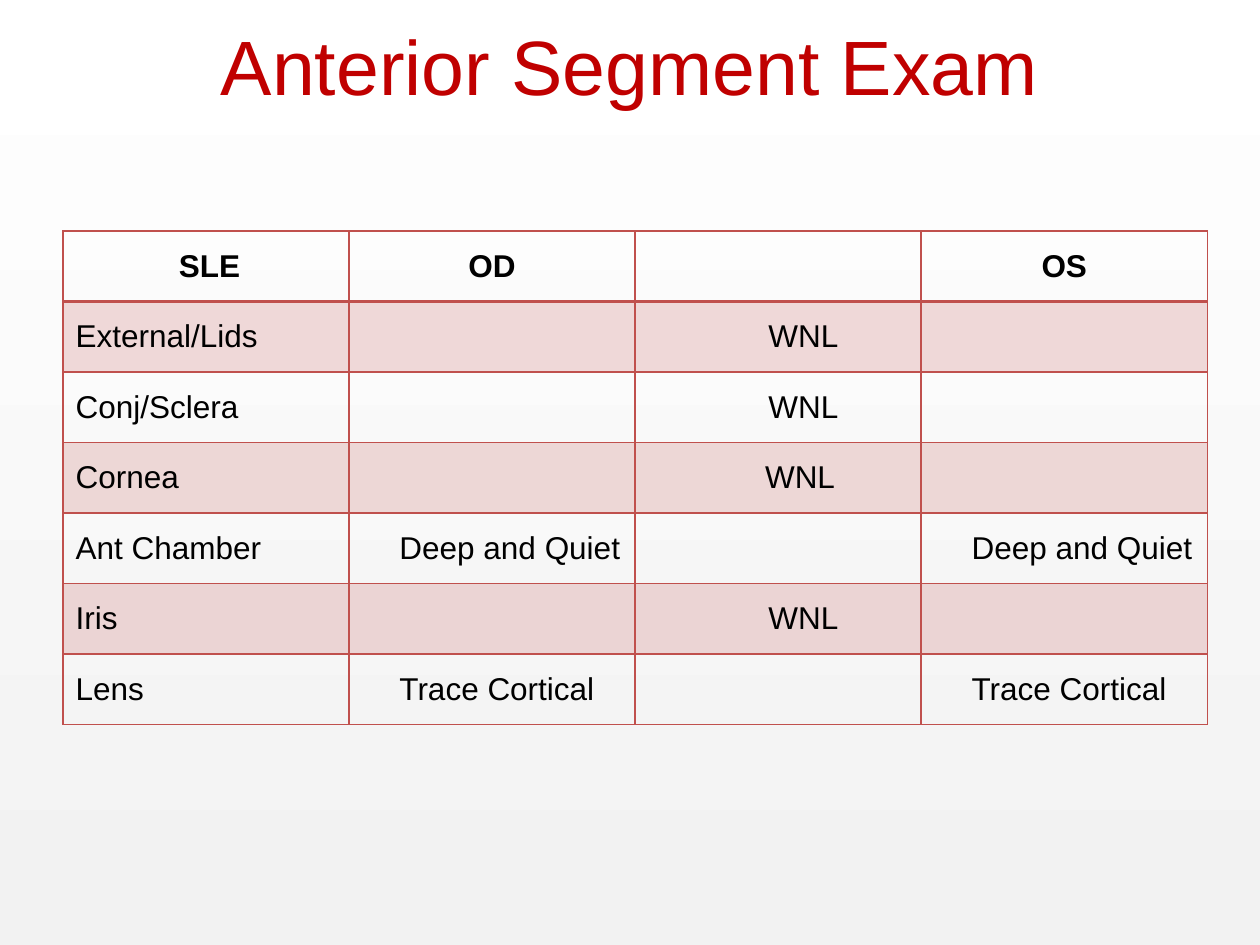
import pptx
import pptx.util
import pptx.dml.color
import pptx.enum.text
import pptx.oxml.ns
from lxml import etree

Pt = pptx.util.Pt
RGB = pptx.dml.color.RGBColor.from_string
CENTER = pptx.enum.text.PP_ALIGN.CENTER
LEFT = pptx.enum.text.PP_ALIGN.LEFT
MIDDLE = pptx.enum.text.MSO_ANCHOR.MIDDLE
qn = pptx.oxml.ns.qn

theme = {
    "font": "Arial", "title": "C00000", "text": "000000", "accent": "C0504D",
    "bottom": "F2F2F2", "top": "FFFFFF", "title_size": 44, "body_size": 18,
    "band_alpha": 20, "line": 1, "header_line": 2,
}


def set_font(paragraph, color, size, bold=False):
    paragraph.font.color.rgb = RGB(color)
    for attribute, value in {"name": theme["font"], "size": Pt(size), "bold": bold}.items():
        setattr(paragraph.font, attribute, value)


def add_border(cell, side, width):
    line = etree.SubElement(cell._tc.get_or_add_tcPr(), qn(f"a:{side}"), w=str(Pt(width)))
    fill = etree.SubElement(line, qn("a:solidFill"))
    etree.SubElement(fill, qn("a:srgbClr"), val=theme["accent"])


deck = pptx.Presentation()
deck.slide_width, deck.slide_height = Pt(720), Pt(540)
slide = deck.slides.add_slide(deck.slide_layouts[5])

backdrop = slide.background.fill
backdrop.gradient()
backdrop.gradient_angle = 90
for stop, tone in zip(backdrop.gradient_stops, ("bottom", "top")):
    stop.color.rgb = RGB(theme[tone])

title = slide.shapes.title
for attribute, value in {"left": 0, "top": -8, "width": 720, "height": 90}.items():
    setattr(title, attribute, Pt(value))
title.text_frame.text = "Anterior Segment Exam"
title.text_frame.vertical_anchor = MIDDLE
title.text_frame.paragraphs[0].alignment = CENTER
set_font(title.text_frame.paragraphs[0], theme["title"], theme["title_size"])

findings = [
    ["SLE", "OD", "", "OS"],
    ["External/Lids", "", "WNL", ""],
    ["Conj/Sclera", "", "WNL", ""],
    ["Cornea", "", "WNL", ""],
    ["Ant Chamber", "Deep and Quiet", "", "Deep and Quiet"],
    ["Iris", "", "WNL", ""],
    ["Lens", "Trace Cortical", "", "Trace Cortical"],
]
column_width, row_height = 163.5, 40.3
exam = slide.shapes.add_table(
    len(findings), 4, Pt(36), Pt(132), Pt(4 * column_width), Pt(len(findings) * row_height)
).table
exam.first_row = exam.horz_banding = False
exam._tbl.tblPr.find(qn("a:tableStyleId")).text = "{2D5ABB26-0587-4C30-8999-92F81FD0307C}"

for row, texts in enumerate(findings):
    for column, text in enumerate(texts):
        cell = exam.cell(row, column)
        header, normal = row == 0, text == "WNL"
        margin_left, margin_right = 7.2, 7.2
        if normal:
            margin_left, margin_right = (25 if texts[0] == "Cornea" else 28.8), 0
        elif text and not header and column:
            margin_left = 28.8
        elif text == "SLE":
            margin_left = 11.1
        cell_format = {
            "text": text, "vertical_anchor": MIDDLE,
            "margin_left": Pt(margin_left), "margin_right": Pt(margin_right),
            "margin_top": Pt(3.6), "margin_bottom": Pt(3.6),
        }
        for attribute, value in cell_format.items():
            setattr(cell, attribute, value)
        paragraph = cell.text_frame.paragraphs[0]
        paragraph.alignment = CENTER if header or normal else LEFT
        set_font(paragraph, theme["text"], theme["body_size"], header)

        for side in ("lnL", "lnR", "lnT", "lnB"):
            thick = (row, side) in ((0, "lnB"), (1, "lnT"))
            add_border(cell, side, theme["header_line" if thick else "line"])
        if row % 2:
            cell.fill.solid()
            cell.fill.fore_color.rgb = RGB(theme["accent"])
            shade = cell._tc.tcPr.find(qn("a:solidFill")).find(qn("a:srgbClr"))
            etree.SubElement(shade, qn("a:alpha"), val=str(theme["band_alpha"] * 1000))
        else:
            cell.fill.background()

deck.save("out.pptx")
